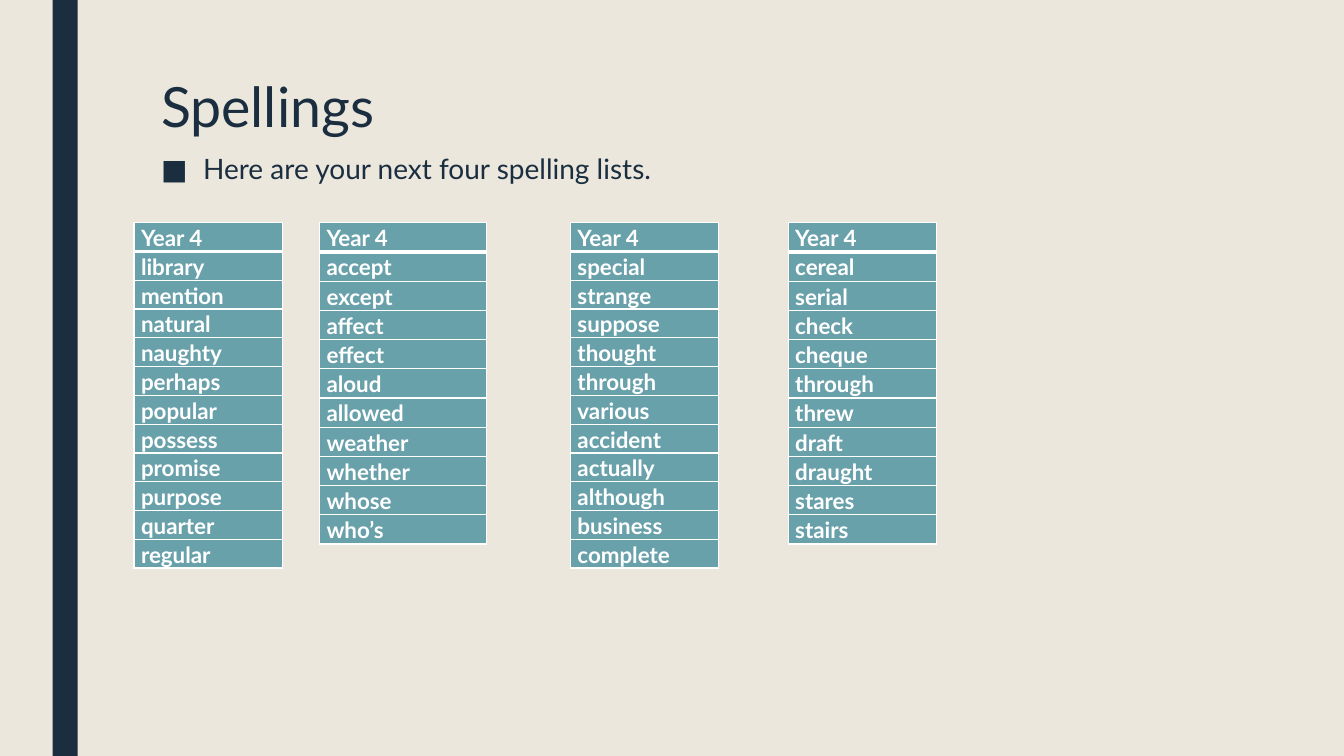
from lxml.etree import SubElement as Sub
from pptx import Presentation
from pptx.dml.color import RGBColor as Rgb
from pptx.enum.shapes import MSO_SHAPE as Kind
from pptx.oxml.ns import qn
from pptx.util import Pt

HUES = {"paper": "EBE7DD", "navy": "1A2E40", "teal": "69A1AB", "white": "FFFFFF"}
FONT = "Lato"
HEAD = "Year 4"
TOP = 159.12
LISTS = [
    (95.76, 106, 20.5, "library mention natural naughty perhaps popular "
                       "possess promise purpose quarter regular"),
    (228.24, 119, 20.88, "accept except affect effect aloud allowed "
                         "weather whether whose who’s"),
    (407.52, 106, 20.5, "special strange suppose thought through various "
                        "accident actually although business complete"),
    (563.04, 106, 20.88, "cereal serial check cheque through threw "
                         "draft draught stares stairs"),
]


def hue(name):
    return Rgb.from_string(HUES[name])


def paint(fill, name):
    fill.solid()
    fill.fore_color.rgb = hue(name)


def write(frame, text, size, color="navy", bold=False, gap=1.0, mark=None):
    para = frame.paragraphs[0]
    para.line_spacing = gap
    run = para.add_run()
    run.text = text
    font = run.font
    font.name, font.size, font.bold = FONT, Pt(size), bold
    font.color.rgb = hue(color)
    if mark:
        para.space_before, para.space_after = Pt(10), Pt(2)
        props = para._p.get_or_add_pPr()
        props.set("marL", str(Pt(30)))
        props.set("indent", str(Pt(-30)))
        Sub(props, qn("a:buFont"), typeface=FONT)
        Sub(props, qn("a:buChar"), char=mark)


def edge(cell, **sides):
    props = cell._tc.get_or_add_tcPr()
    for side, width in sides.items():
        line = Sub(props, qn("a:ln" + side), w=str(Pt(width)))
        fill = Sub(line, qn("a:solidFill"))
        Sub(fill, qn("a:srgbClr"), val=HUES["white"])


class Deck:
    def __init__(self, wide, high):
        self.show = Presentation()
        self.show.slide_width, self.show.slide_height = Pt(wide), Pt(high)
        self.slide = self.show.slides.add_slide(self.show.slide_layouts[6])
        paint(self.slide.background.fill, "paper")

    def bar(self, *box):
        shape = self.slide.shapes.add_shape(Kind.RECTANGLE, *map(Pt, box))
        shape.shadow.inherit = False
        paint(shape.fill, "navy")
        shape.line.fill.background()

    def text(self, box, words, **style):
        frame = self.slide.shapes.add_textbox(*map(Pt, box)).text_frame
        frame.word_wrap = True
        write(frame, words, **style)

    def list(self, left, wide, high, words):
        size = map(Pt, (left, TOP, wide, high * len(words)))
        table = self.slide.shapes.add_table(len(words), 1, *size).table
        table.horz_banding = False
        for i, word in enumerate(words):
            table.rows[i].height = Pt(high)
            cell = table.cell(i, 0)
            cell.margin_left = cell.margin_right = Pt(5)
            cell.margin_top = cell.margin_bottom = 0
            edge(cell, L=1, R=1, T=3 if i == 1 else 1, B=1 if i else 3)
            paint(cell.fill, "teal")
            write(cell.text_frame, word, 16, "white", True, 1.07)


def main():
    deck = Deck(960, 540)
    deck.bar(37.5, 0, 18, 540)
    deck.text((108, 54, 756, 52.5), "Spellings", size=39.6, gap=0.89)
    deck.text((108, 106.5, 756, 282), "Here are your next four spelling lists.",
              size=20, gap=0.94, mark="■")
    for left, wide, high, words in LISTS:
        deck.list(left, wide, high, [HEAD, *words.split()])
    deck.show.save("out.pptx")


if __name__ == "__main__":
    main()
